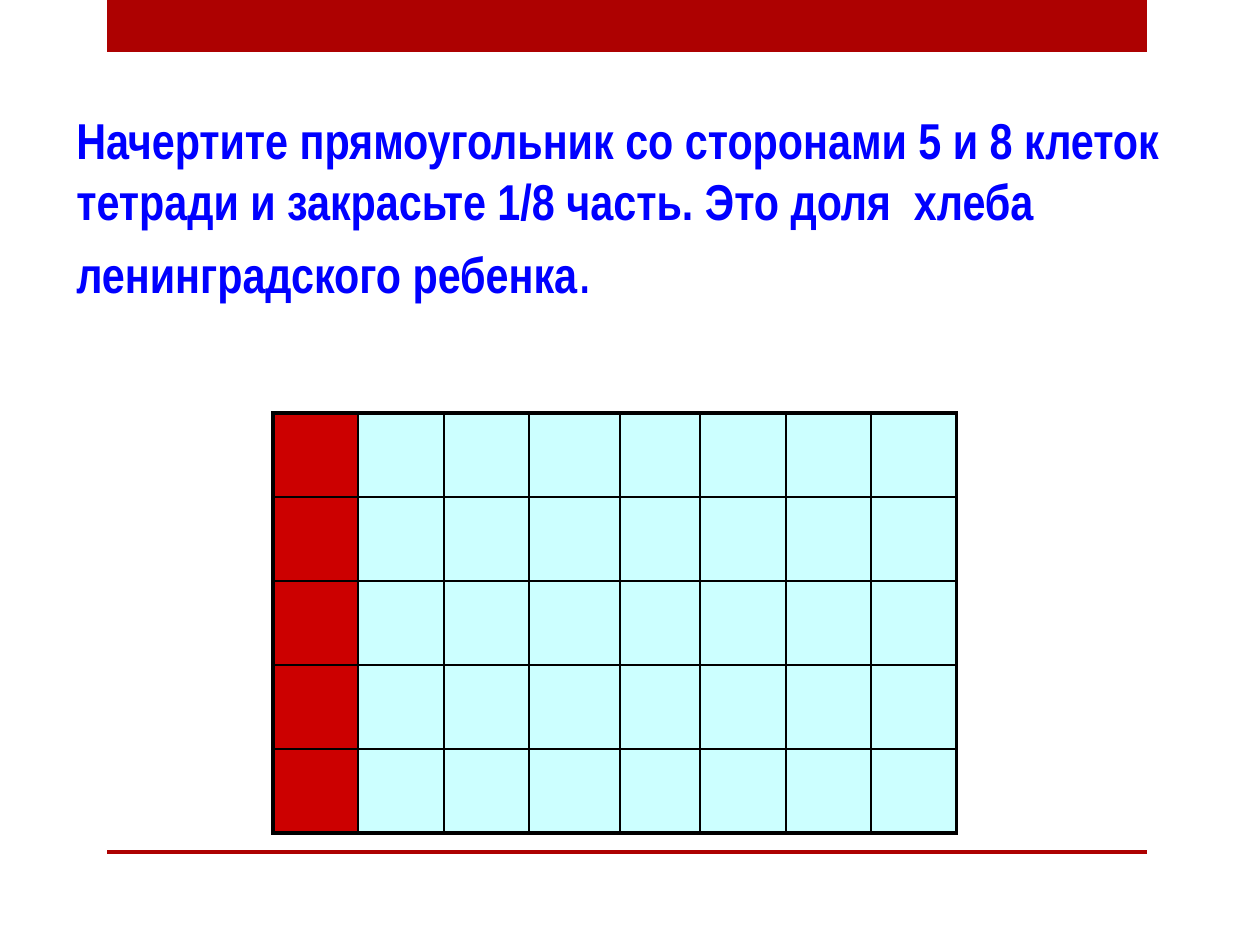
from lxml.etree import SubElement
from pptx import Presentation
from pptx.dml.color import RGBColor
from pptx.enum.shapes import MSO_SHAPE
from pptx.enum.text import MSO_ANCHOR
from pptx.oxml.ns import qn
from pptx.util import Emu, Pt

PX_PER_INCH = 126
BAND_RED = RGBColor(0xAD, 0x01, 0x01)
TASK_BLUE = RGBColor(0x00, 0x00, 0xFF)
SHARE_RED = RGBColor(0xCC, 0x00, 0x00)
CELL_CYAN = RGBColor(0xCC, 0xFF, 0xFF)
GRID_BLACK = RGBColor(0x00, 0x00, 0x00)

TASK = ("Начертите прямоугольник со сторонами 5 и 8 клеток тетради "
        "и закрасьте 1/8 часть. Это доля  хлеба ленинградского ребенка")
COLUMN_WIDTHS = [85, 86, 85, 91, 80, 86, 85, 86]
ROW_COUNT, ROW_HEIGHT = 5, 84
OUTER_LINE, INNER_LINE = Pt(2.25), Pt(1)


def px(length):
    return Emu(round(length * 914400 / PX_PER_INCH))


def add_band(slide, top, height):
    band = slide.shapes.add_shape(
        MSO_SHAPE.RECTANGLE, px(107), px(top), px(1040), px(height))
    band.shadow.inherit = False
    band.fill.solid()
    band.fill.fore_color.rgb = BAND_RED
    band.line.fill.background()


def add_task(slide):
    task = slide.shapes.add_textbox(px(64), px(155), px(1134), px(157))
    frame = task.text_frame
    frame.word_wrap = True
    frame.vertical_anchor = MSO_ANCHOR.BOTTOM
    paragraph = frame.paragraphs[0]
    for text, size, bold in ((TASK, 28.8, True), (".", 36, False)):
        run = paragraph.add_run()
        run.text = text
        run.font.name = "Arial Narrow"
        run.font.size = Pt(size)
        run.font.bold = bold
        run.font.color.rgb = TASK_BLUE


def set_border(cell, side, width):
    line = SubElement(cell._tc.get_or_add_tcPr(), qn(f"a:ln{side}"), w=str(width))
    fill = SubElement(line, qn("a:solidFill"))
    SubElement(fill, qn("a:srgbClr"), val=str(GRID_BLACK))


def add_bread_grid(slide):
    column_count = len(COLUMN_WIDTHS)
    grid = slide.shapes.add_table(
        ROW_COUNT, column_count, px(273), px(413),
        px(sum(COLUMN_WIDTHS)), px(ROW_COUNT * ROW_HEIGHT)).table
    for column, width in zip(grid.columns, COLUMN_WIDTHS):
        column.width = px(width)
    for r, row in enumerate(grid.rows):
        row.height = px(ROW_HEIGHT)
        for c, cell in enumerate(row.cells):
            # Thick lines only on the outside of the rectangle
            outer = {"L": c == 0, "R": c == column_count - 1,
                     "T": r == 0, "B": r == ROW_COUNT - 1}
            for side, is_outer in outer.items():
                set_border(cell, side, OUTER_LINE if is_outer else INNER_LINE)
            # The first column is the shaded eighth
            cell.fill.solid()
            cell.fill.fore_color.rgb = SHARE_RED if c == 0 else CELL_CYAN


def main():
    presentation = Presentation()
    presentation.slide_width = px(1260)
    presentation.slide_height = px(945)
    slide = presentation.slides.add_slide(presentation.slide_layouts[6])

    # Top band and bottom rule
    add_band(slide, 0, 52)
    add_band(slide, 850, 4)

    # Task and its rectangle of 5 by 8 cells
    add_task(slide)
    add_bread_grid(slide)

    presentation.save("out.pptx")


if __name__ == "__main__":
    main()
